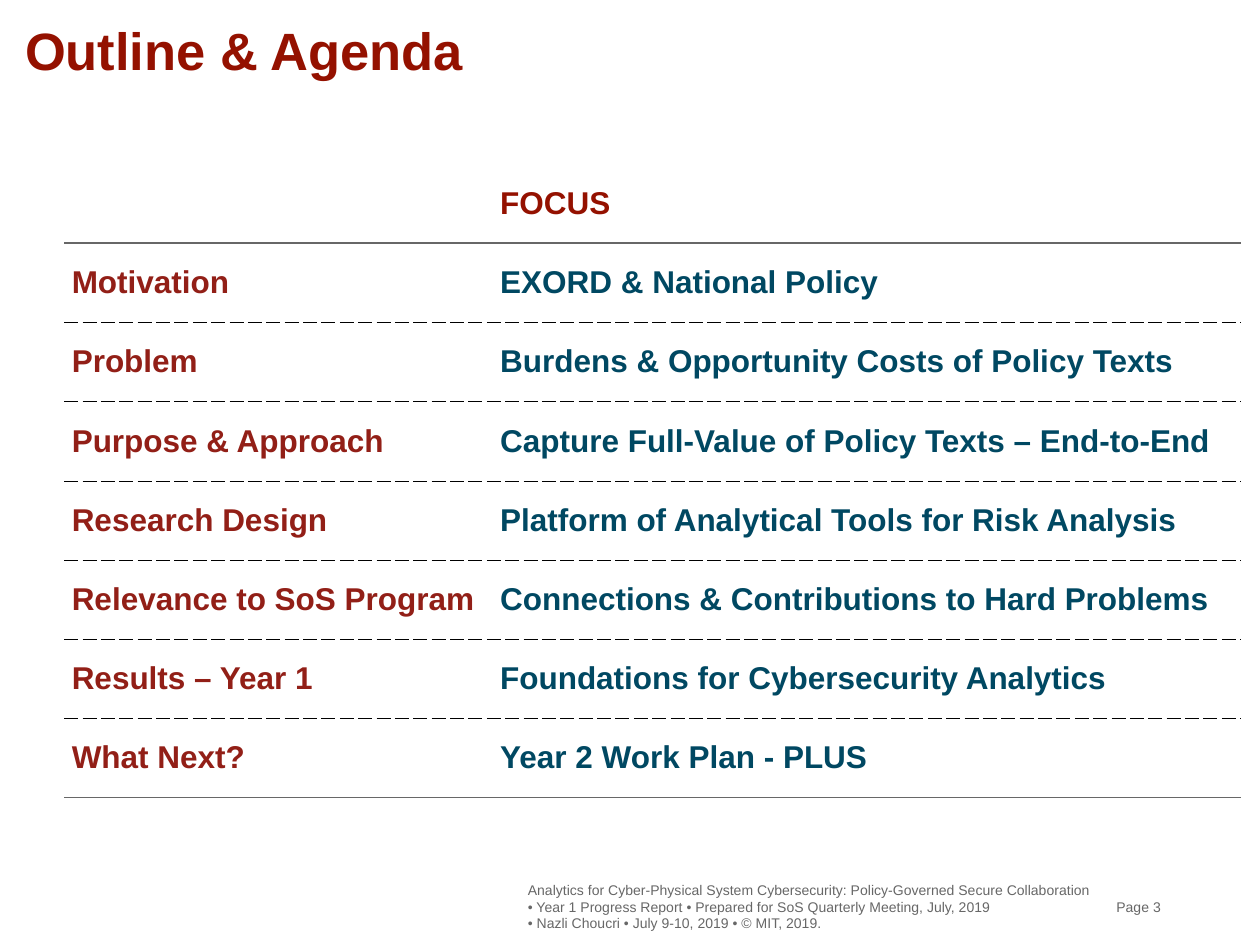
from lxml import etree
from pptx import Presentation
from pptx.dml.color import RGBColor
from pptx.enum import text
from pptx.oxml import ns
from pptx.util import Inches, Pt

COLORS = {
    "heading": "941100",
    "topic": "921F17",
    "focus": "004862",
    "muted": "676767",
    "dash": "000000",
}
SOLID = ("muted", 1, "solid")
DASHED = ("dash", 0.25, "dash")

AGENDA = [
    ("Motivation", "EXORD & National Policy"),
    ("Problem", "Burdens & Opportunity Costs of Policy Texts"),
    ("Purpose & Approach", "Capture Full-Value of Policy Texts – End-to-End"),
    ("Research Design", "Platform of Analytical Tools for Risk Analysis"),
    ("Relevance to SoS Program", "Connections & Contributions to Hard Problems"),
    ("Results – Year 1", "Foundations for Cybersecurity Analytics"),
    ("What Next?", "Year 2 Work Plan - PLUS"),
]
FOOTER = [
    "Analytics for Cyber-Physical System Cybersecurity: Policy-Governed Secure Collaboration",
    "• Year 1 Progress Report • Prepared for SoS Quarterly Meeting, July, 2019",
    "• Nazli Choucri • July 9-10, 2019 • © MIT, 2019.",
]


class SlideBuilder:
    def __init__(self, slide, font="Arial"):
        self.slide = slide
        self.font = font

    def add_run(self, paragraph, words, size, color, bold=False):
        run = paragraph.add_run()
        run.text = words
        run.font.name = self.font
        run.font.size = Pt(size)
        run.font.bold = bold
        run.font.color.rgb = RGBColor.from_string(COLORS[color])

    def set_margins(self, holder, left, top, right, bottom):
        holder.margin_left, holder.margin_top = Inches(left), Inches(top)
        holder.margin_right, holder.margin_bottom = Inches(right), Inches(bottom)

    def text_box(self, place, lines, size, color, bold=False, inset=(0, 0, 0, 0),
                 anchor=text.MSO_ANCHOR.MIDDLE):
        frame = self.slide.shapes.add_textbox(*map(Inches, place)).text_frame
        frame.word_wrap = True
        frame.vertical_anchor = anchor
        self.set_margins(frame, *inset)
        for i, line in enumerate(lines):
            paragraph = frame.add_paragraph() if i else frame.paragraphs[0]
            self.add_run(paragraph, line, size, color, bold)

    def set_borders(self, cell, top, bottom):
        """Draw the given top and bottom rules; None leaves a side without a line."""
        properties = cell._tc.get_or_add_tcPr()
        sides = {"lnL": None, "lnR": None, "lnT": top, "lnB": bottom}
        for position, (side, rule) in enumerate(sides.items()):
            line = etree.Element(ns.qn(f"a:{side}"))
            if rule:
                color, width, dash = rule
                line.set("w", str(Pt(width)))
                fill = etree.SubElement(line, ns.qn("a:solidFill"))
                etree.SubElement(fill, ns.qn("a:srgbClr"), val=COLORS[color])
                etree.SubElement(line, ns.qn("a:prstDash"), val=dash)
            else:
                etree.SubElement(line, ns.qn("a:noFill"))
            properties.insert(position, line)

    def agenda_table(self, place, widths, rows):
        table = self.slide.shapes.add_table(
            len(rows), len(widths), *map(Inches, place)).table
        table.first_row = table.horz_banding = False
        for column, width in zip(table.columns, widths):
            column.width = Inches(width)
        # One rule above each row, and one below the last
        rules = [None, SOLID] + [DASHED] * (len(rows) - 2) + [SOLID]
        for r, row in enumerate(rows):
            for c, words in enumerate(row):
                cell = table.cell(r, c)
                cell.fill.background()
                cell.vertical_anchor = text.MSO_ANCHOR.MIDDLE
                self.set_margins(cell, 0.06, 0, 0.07, 0)
                self.set_borders(cell, rules[r], rules[r + 1])
                if words:
                    color = ("topic", "focus")[c] if r else "heading"
                    self.add_run(cell.text_frame.paragraphs[0], words, 18, color, True)


def main():
    deck = Presentation()
    deck.slide_width, deck.slide_height = Inches(10), Inches(7.5)
    builder = SlideBuilder(deck.slides.add_slide(deck.slide_layouts[6]))

    builder.text_box((0.2, 0.11, 9.6, 0.53), ["Outline & Agenda"], 30, "heading",
                     bold=True, anchor=text.MSO_ANCHOR.BOTTOM)
    builder.agenda_table((0.51, 1.3, 9.34, 5.03), (3.4, 5.94), [("", "FOCUS")] + AGENDA)
    footer_inset = (0.08, 0.04, 0.08, 0.04)
    builder.text_box((4.11, 6.96, 4.63, 0.47), FOOTER, 8, "muted", inset=footer_inset)
    builder.text_box((8.78, 6.96, 0.68, 0.47), ["Page 3"], 8, "muted", inset=footer_inset)

    deck.save("out.pptx")


if __name__ == "__main__":
    main()
